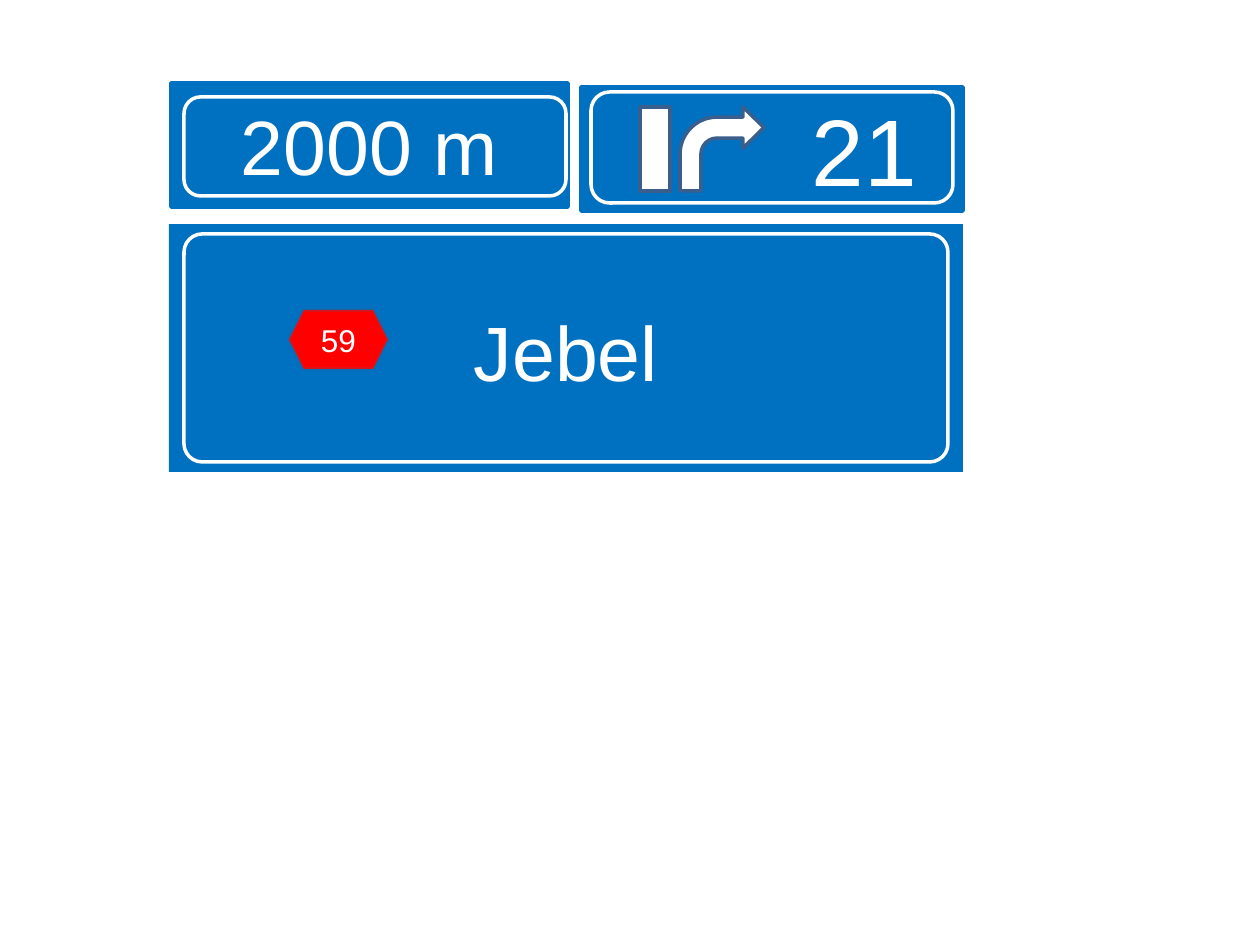
from dataclasses import dataclass
from lxml import etree
from pptx import Presentation
from pptx.dml.color import RGBColor
from pptx.enum.shapes import MSO_SHAPE
from pptx.enum.text import MSO_ANCHOR, PP_ALIGN
from pptx.oxml.ns import qn
from pptx.util import Pt

RECT = MSO_SHAPE.RECTANGLE
ROUND = MSO_SHAPE.ROUNDED_RECTANGLE
ARROW = MSO_SHAPE.BENT_ARROW
HEX = MSO_SHAPE.HEXAGON
MIDDLE = MSO_ANCHOR.MIDDLE
CENTER = PP_ALIGN.CENTER
BLANK = 6


def px(n):
    return round(n * 914400 / 126)


@dataclass(frozen=True)
class Theme:
    blue: str = "0070C0"
    white: str = "FFFFFF"
    red: str = "FF0000"
    edge: str = "3A5F8C"
    font: str = "Arial"
    small: int = 18
    large: int = 44
    huge: int = 54
    stroke: int = 2


def write(shape, text, size, color, font, left=13, top=6):
    frame = shape.text_frame
    frame.word_wrap = True
    frame.vertical_anchor = MIDDLE
    frame.margin_left, frame.margin_right = px(left), px(13)
    frame.margin_top, frame.margin_bottom = px(top), px(6)
    line = frame.paragraphs[0]
    line.alignment = CENTER
    run = line.add_run()
    run.text = text
    run.font.size = Pt(size)
    run.font.name = font
    run.font.color.rgb = RGBColor.from_string(color)


class Sign:
    def __init__(self, slide, theme):
        self.slide = slide
        self.theme = theme

    def shape(self, kind, box, fill=None, line=None, adj=()):
        item = self.slide.shapes.add_shape(kind, *map(px, box))
        item.shadow.inherit = False
        if fill:
            item.fill.solid()
            item.fill.fore_color.rgb = RGBColor.from_string(fill)
        else:
            item.fill.background()
        if line:
            item.line.color.rgb = RGBColor.from_string(line)
            item.line.width = Pt(self.theme.stroke)
        else:
            item.line.fill.background()
        for i, value in enumerate(adj):
            item.adjustments[i] = value
        return item

    def label(self, shape, text, size, **form):
        write(shape, text, size, self.theme.white, self.theme.font, **form)

    def plate(self, box):
        blue = self.theme.blue
        return self.shape(ROUND, box, blue, blue, (0,))

    def panel(self, box):
        return self.shape(RECT, box, self.theme.blue)

    def symbol(self, kind, box, adj=()):
        return self.shape(kind, box, self.theme.white, self.theme.edge, adj)

    def badge(self, box, text):
        item = self.shape(HEX, box, self.theme.red, self.theme.edge)
        color = item.line.fill._xPr.find(".//" + qn("a:srgbClr"))
        etree.SubElement(color, qn("a:alpha")).set("val", "20000")
        self.label(item, text, self.theme.small)

    def border(self, box, adj=()):
        return self.shape(ROUND, box, line=self.theme.white, adj=adj)


def main():
    deck = Presentation()
    deck.slide_width, deck.slide_height = px(1260), px(945)
    theme = Theme()
    sign = Sign(deck.slides.add_slide(deck.slide_layouts[BLANK]), theme)

    sign.label(sign.plate((171, 83, 397, 124)), "2000 m", theme.large)
    sign.label(sign.plate((581, 87, 382, 124)), "21", theme.huge, left=198)
    sign.symbol(RECT, (640, 107, 30, 84))
    sign.symbol(ARROW, (680, 107, 84, 84), (0.25, 0.245, 0.25, 0.44))
    sign.label(sign.panel((169, 224, 794, 248)), "Jebel", theme.large, top=12)
    sign.badge((289, 310, 99, 59), "59")

    sign.border((184, 97, 382, 99))
    sign.border((591, 92, 362, 111))
    sign.border((184, 234, 764, 228), (0.08,))
    deck.save("out.pptx")


if __name__ == "__main__":
    main()
